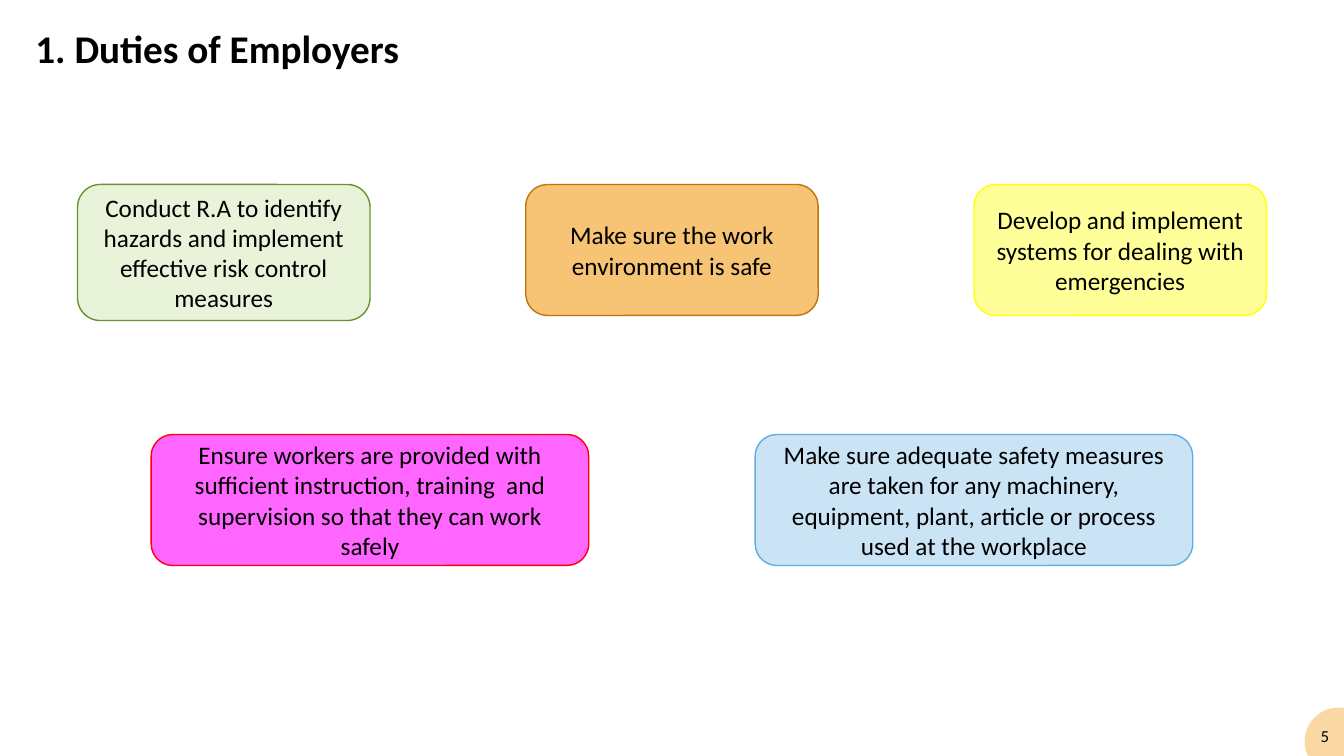
"""Builds a slide of five cards on the duties of employers."""
from dataclasses import dataclass

from pptx import Presentation
from pptx.dml.color import RGBColor as Rgb
from pptx.enum.shapes import MSO_SHAPE as Kind
from pptx.enum.text import MSO_ANCHOR as Anchor, MSO_AUTO_SIZE as Fit, PP_ALIGN as Align
from pptx.shapes.autoshape import Shape
from pptx.slide import Slide
from pptx.util import Inches, Pt

WIDE, HIGH = Inches(13.33), Inches(7.5)


@dataclass(frozen=True)
class Theme:
    font: str = "Calibri"
    ink: str = "000000"
    badge: str = "F9D8A3"
    head: int = 28
    body: int = 18
    note: int = 12
    line: int = 1


@dataclass(frozen=True)
class Box:
    left: float
    top: float
    width: float
    height: float

    def place(self) -> tuple[int, int, int, int]:
        return (int(WIDE * self.left / 100), int(HIGH * self.top / 100),
                int(WIDE * self.width / 100), int(HIGH * self.height / 100))


@dataclass(frozen=True)
class Card:
    text: str
    fill: str
    edge: str
    height: float = 17.33


@dataclass(frozen=True)
class Row:
    top: float
    width: float
    pitch: float
    cards: tuple[Card, ...]


THEME = Theme()
TITLE = Box(1.88, 2.53, 28.88, 7.6)
BADGE = Box(97.07, 93.6, 5.03, 8.93)
NUMBER = Box(97.52, 95.33, 2.18, 4)
ROWS = (
    Row(24.4, 21.76, 33.35, (
        Card("Conduct R.A to identify hazards and implement effective risk control measures",
             "E8F3DA", "699331", 18),
        Card("Make sure the work environment is safe", "F7C475", "BC770B"),
        Card("Develop and implement systems for dealing with emergencies", "FFFF99", "FFFF00"),
    )),
    Row(57.47, 32.56, 44.94, (
        Card("Ensure workers are provided with sufficient instruction, training  and "
             "supervision so that they can work safely", "FF66FF", "FF0000"),
        Card("Make sure adequate safety measures are taken for any machinery, equipment, "
             "plant, article or process used at the workplace", "CAE4F6", "5FADE4"),
    )),
)


def write(shape: Shape, text: str, size: int, align: Align = Align.LEFT,
          anchor: Anchor = Anchor.TOP, wrap: bool = False, bold: bool = False) -> None:
    frame = shape.text_frame
    frame.word_wrap = wrap
    frame.auto_size = Fit.NONE
    frame.vertical_anchor = anchor
    para = frame.paragraphs[0]
    para.alignment = align
    run = para.add_run()
    run.text = text
    run.font.name = THEME.font
    run.font.size = Pt(size)
    run.font.bold = bold
    run.font.color.rgb = Rgb.from_string(THEME.ink)


def draw(slide: Slide, kind: Kind, box: Box, fill: str, edge: str = "") -> Shape:
    shape = slide.shapes.add_shape(kind, *box.place())
    shape.shadow.inherit = False
    shape.fill.solid()
    shape.fill.fore_color.rgb = Rgb.from_string(fill)
    if edge:
        shape.line.color.rgb = Rgb.from_string(edge)
        shape.line.width = Pt(THEME.line)
    else:
        shape.line.fill.background()
    return shape


def lay(slide: Slide, row: Row) -> None:
    start = (100 - row.width - row.pitch * (len(row.cards) - 1)) / 2
    for step, card in enumerate(row.cards):
        box = Box(start + step * row.pitch, row.top, row.width, card.height)
        shape = draw(slide, Kind.ROUNDED_RECTANGLE, box, card.fill, card.edge)
        write(shape, card.text, THEME.body, Align.CENTER, Anchor.MIDDLE, wrap=True)


def main() -> None:
    deck = Presentation()
    deck.slide_width, deck.slide_height = WIDE, HIGH
    slide = deck.slides.add_slide(deck.slide_layouts[5])
    title = slide.shapes.title
    title.left, title.top, title.width, title.height = TITLE.place()
    write(title, "1. Duties of Employers", THEME.head, bold=True)
    for row in ROWS:
        lay(slide, row)
    draw(slide, Kind.OVAL, BADGE, THEME.badge)
    write(slide.shapes.add_textbox(*NUMBER.place()), "5", THEME.note)
    deck.save("out.pptx")


if __name__ == "__main__":
    main()
